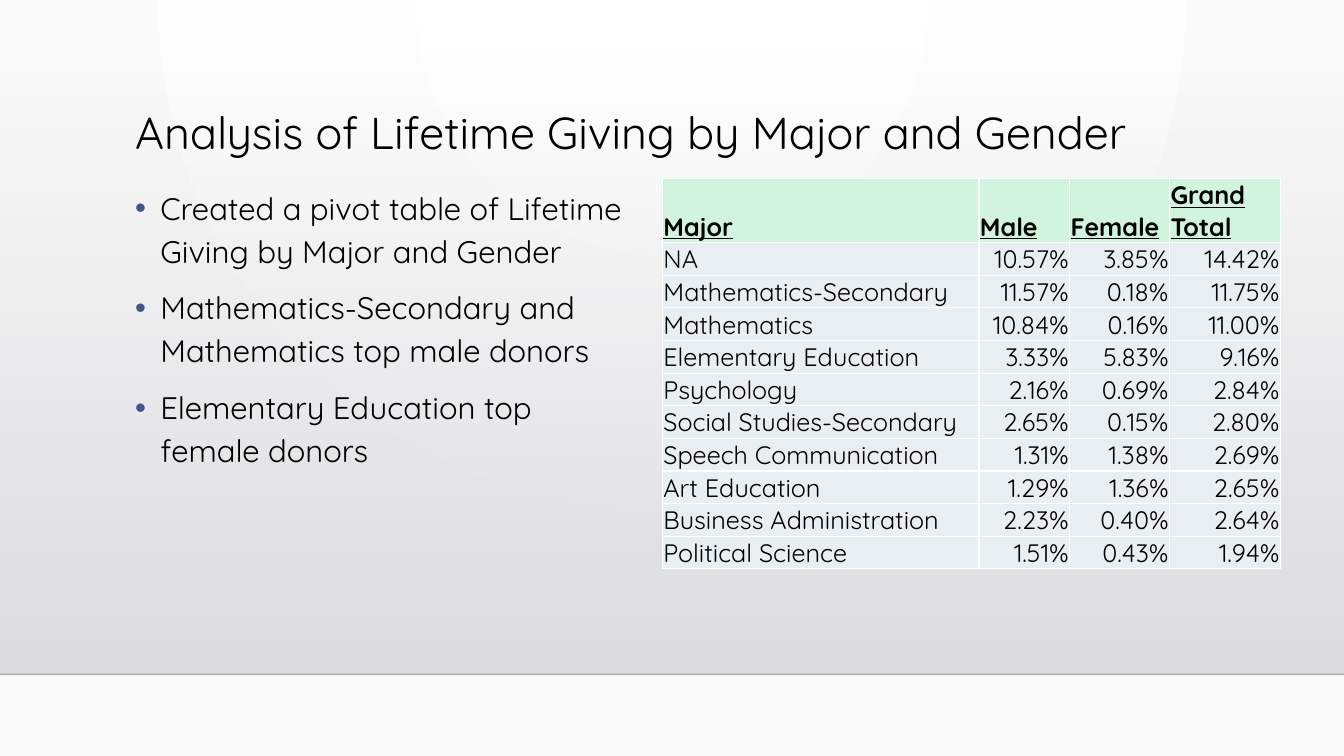
import pptx
import pptx.dml.color
import pptx.enum.shapes
import pptx.enum.text
import pptx.oxml
import pptx.oxml.ns
import pptx.util
from pptx.util import Inches

FONT = "Quicksand"
NS = pptx.oxml.ns.nsdecls("a")
BULLETS = [
    "Created a pivot table of Lifetime Giving by Major and Gender",
    "Mathematics-Secondary and Mathematics top male donors",
    "Elementary Education top female donors",
]
COLUMN_WIDTHS = [3.14, 0.9, 0.99, 1.1]
GIVING = [
    ["Major", "Male", "Female", "Grand Total"],
    ["NA", "10.57%", "3.85%", "14.42%"],
    ["Mathematics-Secondary", "11.57%", "0.18%", "11.75%"],
    ["Mathematics", "10.84%", "0.16%", "11.00%"],
    ["Elementary Education", "3.33%", "5.83%", "9.16%"],
    ["Psychology", "2.16%", "0.69%", "2.84%"],
    ["Social Studies-Secondary", "2.65%", "0.15%", "2.80%"],
    ["Speech Communication", "1.31%", "1.38%", "2.69%"],
    ["Art Education", "1.29%", "1.36%", "2.65%"],
    ["Business Administration", "2.23%", "0.40%", "2.64%"],
    ["Political Science", "1.51%", "0.43%", "1.94%"],
]


def rgb(color):
    return pptx.dml.color.RGBColor.from_string(color)


def xml(markup):
    return pptx.oxml.parse_xml(markup)


def find(element, tag):
    return element.find(".//" + pptx.oxml.ns.qn(tag))


def set_alpha(color_element, percent):
    color_element.append(xml(f'<a:alpha {NS} val="{percent * 1000}"/>'))


def write(p, text, size, bold=False, underline=False, align="LEFT", spacing=1.0, before=0):
    p.alignment = getattr(pptx.enum.text.PP_ALIGN, align)
    p.line_spacing = spacing
    p.space_before = pptx.util.Pt(before)
    r = p.add_run()
    r.text = text
    r.font.name = FONT
    r.font.size = pptx.util.Pt(size)
    r.font.bold = bold
    r.font.underline = underline
    r.font.color.rgb = rgb("000000")


def place(s, left, top, width, height):
    s.left, s.top = Inches(left), Inches(top)
    s.width, s.height = Inches(width), Inches(height)


def set_gradient(fill, start, end):
    fill.gradient()
    for stop, color in zip(fill.gradient_stops, (start, end)):
        stop.color.rgb = rgb(color)


def send_to_back(slide, s, position):
    """Put a shape behind the placeholders, at the given place in the stack."""
    slide.shapes.element.insert(2 + position, s.element)


def add_backdrop(slide):
    set_gradient(slide.background.fill, "FFFFFF", "FAFAFA")
    lin = find(slide.element, "a:lin")
    lin.getparent().replace(lin, xml(
        f'<a:path {NS} path="circle">'
        '<a:fillToRect l="43000" t="0" r="43000" b="100000"/></a:path>'))

    shade = slide.shapes.add_shape(
        pptx.enum.shapes.MSO_SHAPE.RECTANGLE,
        Inches(0), Inches(0.51), Inches(13.33), Inches(6.18))
    shade.shadow.inherit = False
    shade.line.fill.background()
    set_gradient(shade.fill, "DCDCE0", "DEDEE2")
    shade.fill.gradient_angle = 270
    set_alpha(find(shade.element, "a:srgbClr"), 0)
    send_to_back(slide, shade, 0)

    floor = slide.shapes.add_connector(
        pptx.enum.shapes.MSO_CONNECTOR.STRAIGHT,
        Inches(0), Inches(6.69), Inches(13.33), Inches(6.69))
    floor.line.width = pptx.util.Pt(1)
    floor.line.color.rgb = rgb("000001")
    set_alpha(find(floor.element, "a:srgbClr"), 20)
    find(floor.element, "p:spPr").append(xml(f"<a:effectLst {NS}/>"))
    send_to_back(slide, floor, 1)


def fill_title(title, text):
    place(title, 1.24, 1.04, 10.66, 0.59)
    tf = title.text_frame
    tf.vertical_anchor = pptx.enum.text.MSO_ANCHOR.MIDDLE
    tf.auto_size = pptx.enum.text.MSO_AUTO_SIZE.NONE
    write(tf.paragraphs[0], text, 32, spacing=0.9)


def fill_bullets(body, items):
    place(body, 1.24, 1.77, 5.16, 3.68)
    tf = body.text_frame
    tf.auto_size = pptx.enum.text.MSO_AUTO_SIZE.NONE
    for i, item in enumerate(items):
        p = tf.add_paragraph() if i else tf.paragraphs[0]
        pPr = p._p.get_or_add_pPr()
        pPr.set("marL", str(Inches(0.25)))
        pPr.set("indent", str(-Inches(0.25)))
        pPr.append(xml(f'<a:buClr {NS}><a:srgbClr val="415588"/></a:buClr>'))
        pPr.append(xml(f'<a:buFont {NS} typeface="Arial"/>'))
        pPr.append(xml(f'<a:buChar {NS} char="•"/>'))
        write(p, item, 22.2, spacing=1.15, before=10 if i else 0)


def format_cell(cell, text, header, align):
    cell.margin_left = cell.margin_right = cell.margin_top = Inches(0.01)
    cell.margin_bottom = Inches(0)
    cell.vertical_anchor = pptx.enum.text.MSO_ANCHOR.BOTTOM
    write(cell.text_frame.paragraphs[0], text, 18, bold=header, underline=header, align=align)
    tcPr = cell._tc.get_or_add_tcPr()
    for side in ("lnL", "lnR", "lnT", "lnB"):
        tcPr.append(xml(f'<a:{side} {NS} w="12700"><a:solidFill>'
                        f'<a:srgbClr val="FFFFFF"/></a:solidFill></a:{side}>'))
    cell.fill.solid()
    cell.fill.fore_color.rgb = rgb("D1F4DF" if header else "E9EEF3")


def add_giving_table(slide):
    header_height, row_height = 0.63, 0.32
    height = header_height + row_height * (len(GIVING) - 1)
    table = slide.shapes.add_table(
        len(GIVING), len(COLUMN_WIDTHS), Inches(6.57), Inches(1.77),
        Inches(sum(COLUMN_WIDTHS)), Inches(height)).table
    for column, width in zip(table.columns, COLUMN_WIDTHS):
        column.width = Inches(width)
    for i, values in enumerate(GIVING):
        table.rows[i].height = Inches(row_height if i else header_height)
        for j, value in enumerate(values):
            format_cell(table.cell(i, j), value, header=i == 0,
                        align="RIGHT" if i and j else "LEFT")


def main():
    prs = pptx.Presentation()
    prs.slide_width, prs.slide_height = Inches(13.33), Inches(7.5)
    slide = prs.slides.add_slide(prs.slide_layouts[1])
    add_backdrop(slide)
    fill_title(slide.shapes.title, "Analysis of Lifetime Giving by Major and Gender")
    fill_bullets(slide.placeholders[1], BULLETS)
    add_giving_table(slide)
    prs.save("out.pptx")


if __name__ == "__main__":
    main()
